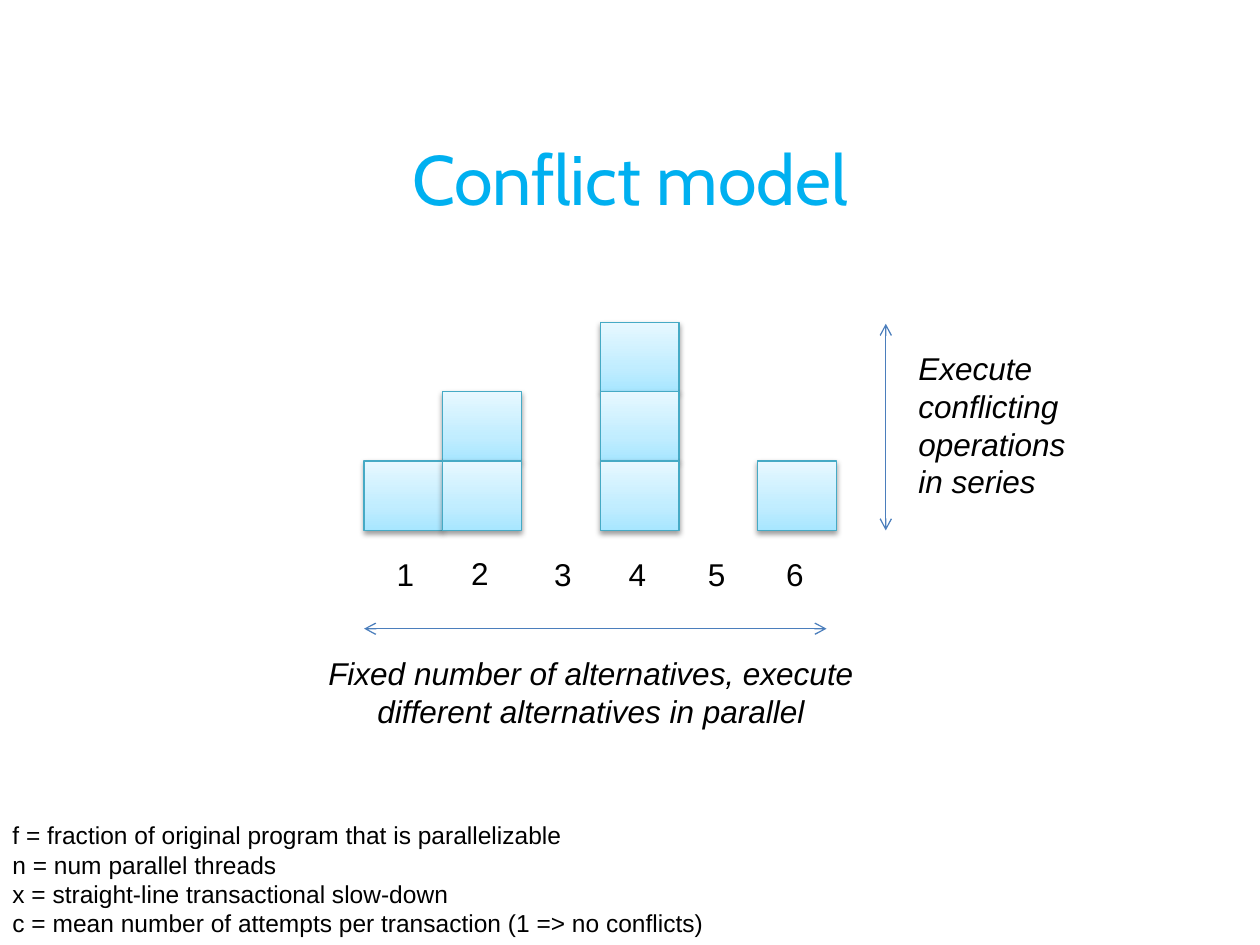
from pptx import Presentation
from pptx.dml.color import RGBColor
from pptx.enum.shapes import MSO_CONNECTOR, MSO_SHAPE
from pptx.enum.text import MSO_ANCHOR, PP_ALIGN
from pptx.oxml import parse_xml
from pptx.oxml.ns import nsdecls
from pptx.util import Inches, Pt

RECT = MSO_SHAPE.RECTANGLE
STRAIGHT = MSO_CONNECTOR.STRAIGHT
LEFT, CENTER = PP_ALIGN.LEFT, PP_ALIGN.CENTER
TOP, MIDDLE = MSO_ANCHOR.TOP, MSO_ANCHOR.MIDDLE

COLORS = {
    "title": "00B0F0", "text": "000000", "arrow": "4B7EBC", "edge": "46AAC5",
    "low": "A7E6FF", "mid": "C1EDFF", "high": "E7F8FF", "shadow": "000000",
}
NS = nsdecls("a")
STOPS = "".join(
    f'<a:gs pos="{pos}"><a:srgbClr val="{COLORS[name]}"/></a:gs>'
    for pos, name in ((0, "low"), (35000, "mid"), (100000, "high")))
GRADIENT = (f'<a:gradFill {NS} rotWithShape="1"><a:gsLst>{STOPS}</a:gsLst>'
            '<a:lin ang="16200000" scaled="0"/></a:gradFill>')
SHADOW = (f'<a:effectLst {NS}><a:outerShdw blurRad="{Pt(3.1)}" dist="{Pt(1.6)}" '
          f'dir="5400000" rotWithShape="0"><a:srgbClr val="{COLORS["shadow"]}">'
          '<a:alpha val="38000"/></a:srgbClr></a:outerShdw></a:effectLst>')

prs = Presentation()
prs.slide_width, prs.slide_height = Inches(10), Inches(7.5)
s = prs.slides.add_slide(prs.slide_layouts[6])


def add_text(lines, box, size=18, color="text", font="Arial", italic=False,
             align=LEFT, anchor=TOP, wrap=False):
    tf = s.shapes.add_textbox(*map(Inches, box)).text_frame
    tf.word_wrap, tf.vertical_anchor = wrap, anchor
    style = {"size": Pt(size), "name": font, "italic": italic}
    for i, line in enumerate(lines):
        p = tf.paragraphs[0] if i == 0 else tf.add_paragraph()
        p.text, p.alignment = line, align
        for r in p.runs:
            for key, value in style.items():
                setattr(r.font, key, value)
            r.font.color.rgb = RGBColor.from_string(COLORS[color])


def add_double_arrow(*ends):
    line = s.shapes.add_connector(STRAIGHT, *map(Inches, ends))
    line.line.color.rgb = RGBColor.from_string(COLORS["arrow"])
    line.line.width = Pt(0.75)
    ln = line.line._get_or_add_ln()
    for end in ("headEnd", "tailEnd"):
        ln.append(parse_xml(f'<a:{end} {NS} type="arrow"/>'))
    line._element.spPr.append(parse_xml(f"<a:effectLst {NS}/>"))


add_text(["Conflict model"], (0.5, 0.78, 9, 1.25), size=40, color="title",
         font="Cabin", align=CENTER, anchor=MIDDLE, wrap=True)
add_text(["f = fraction of original program that is parallelizable",
          "n = num parallel threads",
          "x = straight-line transactional slow-down",
          "c = mean number of attempts per transaction (1 => no conflicts)"],
         (0, 6.46, 5.71, 1.04), size=14)

# Stacks of conflicting operations, one column per alternative
stack_heights = [1, 2, 0, 3, 0, 1]
left, base, block_w, block_h = 2.89, 4.21, 0.625, 0.55
for level in range(max(stack_heights), 0, -1):
    for col, height in enumerate(stack_heights):
        if level > height:
            continue
        sp = s.shapes.add_shape(
            RECT, Inches(left + col * block_w), Inches(base - level * block_h),
            Inches(block_w), Inches(block_h))
        sp._element.spPr.append(parse_xml(GRADIENT))
        sp.line.color.rgb = RGBColor.from_string(COLORS["edge"])
        sp.line.width = Pt(0.75)
        sp._element.spPr.append(parse_xml(SHADOW))

label_places = [(3.05, 4.36), (3.64, 4.35), (4.3, 4.36),
                (4.89, 4.36), (5.52, 4.36), (6.14, 4.36)]
for number, (x, y) in enumerate(label_places, 1):
    add_text([str(number)], (x, y, 0.34, 0.4))

add_double_arrow(2.89, 4.99, 6.56, 4.99)
add_text(["Fixed number of alternatives, execute\vdifferent alternatives in parallel"],
         (1.95, 5.14, 5.48, 0.71), italic=True, align=CENTER, wrap=True)
add_double_arrow(7.03, 4.21, 7.03, 2.57)
add_text(["Execute", "conflicting", "operations", "in series"],
         (7.19, 2.72, 1.45, 1.31), italic=True)

prs.save("out.pptx")
